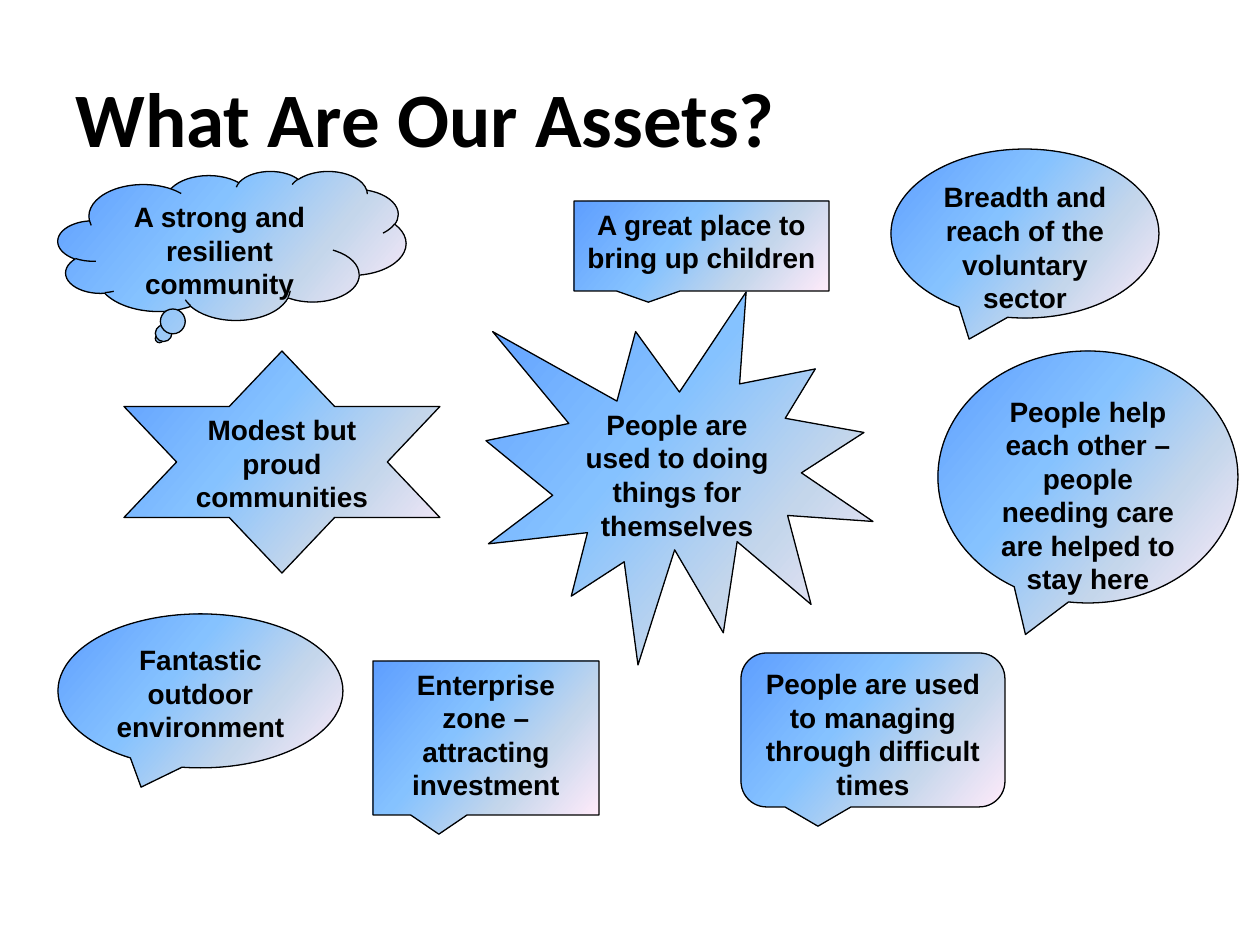
from copy import deepcopy

from pptx import Presentation
from pptx.dml.color import RGBColor
from pptx.enum.shapes import MSO_SHAPE
from pptx.enum.text import MSO_ANCHOR, PP_ALIGN
from pptx.oxml.ns import qn
from pptx.util import Emu, Pt

PX_PER_INCH = 126
BLACK = "000000"
GRADIENT = [(0, "5E9EFF"), (0.4, "85C2FF"), (0.7, "C4D6EB"), (1, "FFEBFA")]
ASSETS = [
    (MSO_SHAPE.CLOUD_CALLOUT, (58, 171, 348, 149), "A strong and resilient community"),
    (MSO_SHAPE.OVAL_CALLOUT, (891, 149, 268, 169), "Breadth and reach of the voluntary sector"),
    (MSO_SHAPE.STAR_6_POINT, (124, 351, 316, 222), "Modest but proud communities"),
    (MSO_SHAPE.ROUNDED_RECTANGULAR_CALLOUT, (741, 653, 264, 154),
     "People are used to managing through difficult times"),
    (MSO_SHAPE.OVAL_CALLOUT, (58, 614, 285, 154), "Fantastic outdoor environment"),
    (MSO_SHAPE.RECTANGULAR_CALLOUT, (574, 201, 255, 90), "A great place to bring up children"),
    (MSO_SHAPE.RECTANGULAR_CALLOUT, (373, 661, 226, 154), "Enterprise zone – attracting investment"),
    (MSO_SHAPE.EXPLOSION1, (486, 292, 387, 373), "People are used to doing things for themselves"),
    (MSO_SHAPE.OVAL_CALLOUT, (938, 351, 300, 252),
     "People help each other – people needing care are helped to stay here"),
]


def px(length):
    return Emu(round(length * 914400 / PX_PER_INCH))


def rgb(color):
    return RGBColor.from_string(color)


def write(frame, text, size, font, align, anchor, color=BLACK, bold=True):
    frame.word_wrap = True
    frame.vertical_anchor = anchor
    paragraph = frame.paragraphs[0]
    paragraph.alignment = align
    run = paragraph.add_run()
    run.text = text
    run.font.size = Pt(size)
    run.font.name = font
    run.font.bold = bold
    run.font.color.rgb = rgb(color)


def fill_gradient(shape):
    fill = shape.fill
    fill.gradient()
    fill.gradient_angle = 320
    stop_list = next(shape.element.iter(qn("a:gsLst")))
    while len(stop_list) < len(GRADIENT):
        stop_list.append(deepcopy(stop_list[0]))
    for stop, (position, color) in zip(fill.gradient_stops, GRADIENT):
        stop.position = position
        stop.color.rgb = rgb(color)


def add_title(slide, text, box):
    title = slide.shapes.title
    title.left, title.top, title.width, title.height = map(px, box)
    write(title.text_frame, text, size=44, font="Calibri",
          align=PP_ALIGN.LEFT, anchor=MSO_ANCHOR.MIDDLE)


def add_asset(slide, kind, box, text):
    asset = slide.shapes.add_shape(kind, *map(px, box))
    asset.shadow.inherit = False
    fill_gradient(asset)
    asset.line.color.rgb = rgb(BLACK)
    asset.line.width = Pt(0.75)
    write(asset.text_frame, text, size=16, font="Arial",
          align=PP_ALIGN.CENTER, anchor=MSO_ANCHOR.TOP)


def main():
    presentation = Presentation()
    presentation.slide_width = px(1260)
    presentation.slide_height = px(945)
    slide = presentation.slides.add_slide(presentation.slide_layouts[5])
    add_title(slide, "What Are Our Assets?", (63, 38, 1134, 158))
    for kind, box, text in ASSETS:
        add_asset(slide, kind, box, text)
    presentation.save("out.pptx")


if __name__ == "__main__":
    main()
